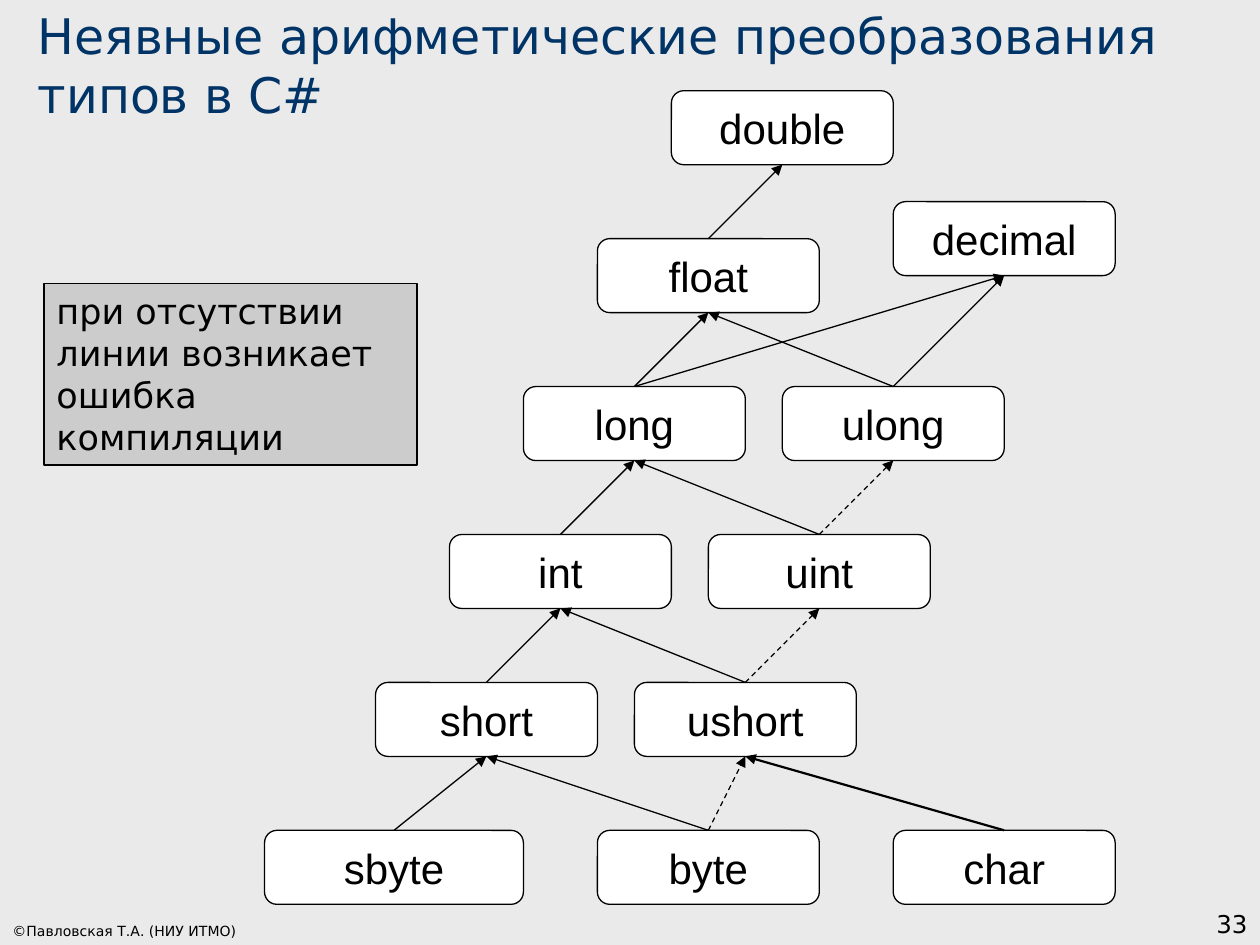
"""Build the slide on implicit arithmetic type conversions in C#."""
from lxml import etree
from pptx import Presentation
from pptx.dml.color import RGBColor
from pptx.enum.dml import MSO_LINE
from pptx.enum.shapes import MSO_CONNECTOR, MSO_SHAPE
from pptx.enum.text import MSO_ANCHOR, MSO_AUTO_SIZE, PP_ALIGN
from pptx.oxml.ns import qn
from pptx.util import Inches, Pt

LEFT, CENTER, RIGHT = PP_ALIGN.LEFT, PP_ALIGN.CENTER, PP_ALIGN.RIGHT
TOP, MIDDLE, BOTTOM = MSO_ANCHOR.TOP, MSO_ANCHOR.MIDDLE, MSO_ANCHOR.BOTTOM
RECTANGLE, ROUNDED = MSO_SHAPE.RECTANGLE, MSO_SHAPE.ROUNDED_RECTANGLE
STRAIGHT, DASH, NO_FIT = MSO_CONNECTOR.STRAIGHT, MSO_LINE.DASH, MSO_AUTO_SIZE.NONE

COLORS = {"page": "EAEAEA", "title": "003366", "ink": "000000", "node": "FFFFFF", "note": "C0C0C0"}
SANS, ARIAL = "DejaVu Sans", "Arial"

TITLE = "Неявные арифметические преобразования типов в C#"
NOTE = "при отсутствии линии возникает ошибка компиляции"
FOOTERS = [
    ("©Павловская Т.А. (НИУ ИТМО)", (0, 7.22, 3.11, 0.28), 8, LEFT),
    ("33", (7.92, 7, 2.08, 0.5), 14, RIGHT),
]

# Grid column, row and width of every type, in half box heights.
TYPES = {
    "double": (11, 0, 6),
    "decimal": (17, 3, 6),
    "float": (9, 4, 6),
    "long": (7, 8, 6),
    "ulong": (14, 8, 6),
    "int": (5, 12, 6),
    "uint": (12, 12, 6),
    "short": (3, 16, 6),
    "ushort": (10, 16, 6),
    "sbyte": (0, 20, 7),
    "byte": (9, 20, 6),
    "char": (17, 20, 6),
}
CONVERSIONS = [
    ("sbyte", "short"), ("byte", "short"), ("short", "int"), ("ushort", "int"),
    ("int", "long"), ("uint", "long"), ("long", "float"), ("ulong", "float"),
    ("long", "decimal"), ("ulong", "decimal"), ("float", "double"),
]
DASHED = [("byte", "ushort"), ("ushort", "uint"), ("uint", "ulong")]
THICK = [("char", "ushort")]

GRID_LEFT, GRID_TOP, GRID_BOTTOM = 2.1, 0.72, 6.59
UNIT = (GRID_BOTTOM - GRID_TOP) / 20
TOP_SITE, BOTTOM_SITE = 0, 2


def color(name):
    return RGBColor.from_string(COLORS[name])


def write(shape, text, size, font, align=LEFT, anchor=MIDDLE, ink="ink"):
    frame = shape.text_frame
    frame.text = text
    frame.word_wrap = True
    frame.auto_size = NO_FIT
    frame.vertical_anchor = anchor
    para = frame.paragraphs[0]
    para.alignment = align
    para.font.size = Pt(size)
    para.font.name = font
    para.font.color.rgb = color(ink)


def add_box(slide, kind, place, fill):
    box = slide.shapes.add_shape(kind, *map(Inches, place))
    box.shadow.inherit = False
    box.fill.solid()
    box.fill.fore_color.rgb = color(fill)
    box.line.color.rgb = color("ink")
    box.line.width = Pt(0.75)
    return box


def add_arrow(slide, source, target, width=0.75, dash=None):
    arrow = slide.shapes.add_connector(STRAIGHT, 0, 0, 0, 0)
    arrow.begin_connect(source, TOP_SITE)
    arrow.end_connect(target, BOTTOM_SITE)
    arrow.line.color.rgb = color("ink")
    arrow.line.width = Pt(width)
    if dash:
        arrow.line.dash_style = dash
    properties = arrow.element.spPr
    etree.SubElement(properties.find(qn("a:ln")), qn("a:tailEnd"), type="triangle")
    etree.SubElement(properties, qn("a:effectLst"))


def main():
    deck = Presentation()
    deck.slide_width, deck.slide_height = Inches(10), Inches(7.5)
    slide = deck.slides.add_slide(deck.slide_layouts[5])
    slide.background.fill.solid()
    slide.background.fill.fore_color.rgb = color("page")

    for text, place, size, align in FOOTERS:
        box = slide.shapes.add_textbox(*map(Inches, place))
        write(box, text, size, SANS, align, BOTTOM)

    title = slide.shapes.title
    title.left, title.top, title.width, title.height = map(Inches, (0.2, 0, 9.61, 1.03))
    write(title, TITLE, 28, SANS, LEFT, BOTTOM, "title")

    nodes = {}
    for name, (column, row, width) in TYPES.items():
        place = (GRID_LEFT + column * UNIT, GRID_TOP + row * UNIT, width * UNIT, 2 * UNIT)
        nodes[name] = add_box(slide, ROUNDED, place, "node")
        write(nodes[name], name, 24, ARIAL, CENTER)

    for pairs, width, dash in ((CONVERSIONS, 0.75, None), (DASHED, 0.75, DASH), (THICK, 1.25, None)):
        for source, target in pairs:
            add_arrow(slide, nodes[source], nodes[target], width, dash)

    note = add_box(slide, RECTANGLE, (0.35, 2.25, 2.96, 1.44), "note")
    fill_color = note.element.spPr.find(qn("a:solidFill"))[0]
    etree.SubElement(fill_color, qn("a:alpha"), val="70000")
    write(note, NOTE, 20, SANS, LEFT, TOP)

    deck.save("out.pptx")


if __name__ == "__main__":
    main()
